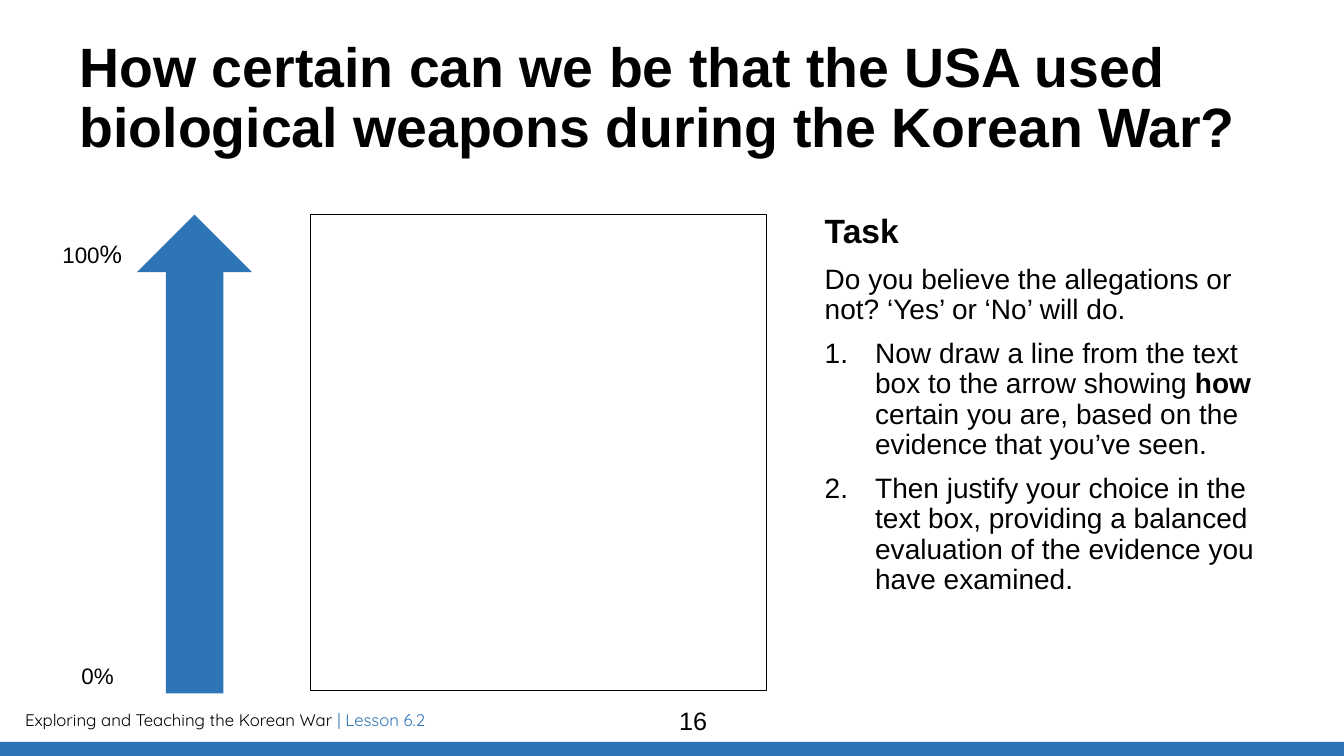
import pptx
import pptx.util
import pptx.dml.color
import pptx.enum.shapes
import pptx.enum.text
import pptx.oxml

Inches = pptx.util.Inches
Pt = pptx.util.Pt

COLOURS = {"text": "000000", "accent": "2E75B6", "paper": "FFFFFF"}
SLIDE_WIDTH, SLIDE_HEIGHT = 13.33, 7.5
CONTENT_TOP = 2.13

TITLE = "How certain can we be that the USA used biological weapons during the Korean War?"
FOOTER = [("Exploring and Teaching the Korean War ", "text"), ("| Lesson 6.2", "accent")]
PAGE_NUMBER = "16"
TASK_HEADING = "Task"
TASK_QUESTION = "Do you believe the allegations or not? ‘Yes’ or ‘No’ will do."
TASK_STEPS = [
    [("Now draw a line from the text box to the arrow showing ", False), ("how", True),
     (" certain you are, based on the evidence that you’ve seen.", False)],
    [("Then justify your choice in the text box, providing a balanced evaluation "
      "of the evidence you have examined.", False)],
]


def colour(name):
    return pptx.dml.color.RGBColor.from_string(COLOURS[name])


def add_box(slide, left, top, width, height, margin=None):
    box = slide.shapes.add_textbox(Inches(left), Inches(top), Inches(width), Inches(height))
    frame = box.text_frame
    frame.word_wrap = True
    if margin is not None:
        frame.margin_left = frame.margin_right = Inches(margin)
        frame.margin_top = frame.margin_bottom = Inches(margin)
    return frame


def style(paragraph, size, bold=None, font="Arial"):
    paragraph.font.name = font
    paragraph.font.size = Pt(size)
    paragraph.font.bold = bold
    paragraph.font.color.rgb = colour("text")


def add_runs(paragraph, parts):
    runs = []
    for text, *_ in parts:
        run = paragraph.add_run()
        run.text = text
        runs.append(run)
    return runs


def number(paragraph):
    properties = paragraph._p.get_or_add_pPr()
    properties.set("marL", str(Inches(0.5)))
    properties.set("indent", str(-Inches(0.5)))
    properties.append(pptx.oxml.parse_xml(
        '<a:buFont xmlns:a="http://schemas.openxmlformats.org/drawingml/2006/main" typeface="+mj-lt"/>'))
    properties.append(pptx.oxml.parse_xml(
        '<a:buAutoNum xmlns:a="http://schemas.openxmlformats.org/drawingml/2006/main" type="arabicPeriod"/>'))


def add_filled_shape(slide, kind, left, top, width, height, fill, line=None):
    shape = slide.shapes.add_shape(kind, Inches(left), Inches(top), Inches(width), Inches(height))
    shape.shadow.inherit = False
    shape.fill.solid()
    shape.fill.fore_color.rgb = colour(fill)
    if line:
        shape.line.color.rgb = colour(line)
        shape.line.width = Pt(1)
    else:
        shape.line.fill.background()


def add_footer(slide):
    paragraph = add_box(slide, 0.15, 6.99, 7.82, 0.3).paragraphs[0]
    for run, (_, name) in zip(add_runs(paragraph, FOOTER), FOOTER):
        run.font.color.rgb = colour(name)
    style(paragraph, 12, font="Quicksand")
    kind = pptx.enum.shapes.MSO_SHAPE.RECTANGLE
    add_filled_shape(slide, kind, 0, 7.36, SLIDE_WIDTH, 0.15, "accent")


def add_task(slide):
    frame = add_box(slide, 8.18, CONTENT_TOP, 4.31, 4.76, margin=0)
    heading = frame.paragraphs[0]
    heading.text = TASK_HEADING
    style(heading, 24, True)
    question = frame.add_paragraph()
    question.text = TASK_QUESTION
    style(question, 20)
    for step in TASK_STEPS:
        paragraph = frame.add_paragraph()
        number(paragraph)
        for run, (_, bold) in zip(add_runs(paragraph, step), step):
            run.font.bold = bold
        style(paragraph, 20)
    for paragraph in frame.paragraphs:
        paragraph.line_spacing = 0.9
    for paragraph in frame.paragraphs[1:]:
        paragraph.space_before = Pt(10)


def add_scale(slide):
    kinds = pptx.enum.shapes.MSO_SHAPE
    add_filled_shape(slide, kinds.UP_ARROW, 1.36, CONTENT_TOP, 1.14, 4.75, "accent")
    bottom_label = add_box(slide, 0.71, 6.52, 0.59, 0.37).paragraphs[0]
    bottom_label.text = "0%"
    style(bottom_label, 16)
    top_label = add_box(slide, 0.52, 2.32, 0.98, 0.4).paragraphs[0]
    percent = add_runs(top_label, [("100",), ("%",)])[1]
    percent.font.size = Pt(18)
    style(top_label, 16)
    add_filled_shape(slide, kinds.RECTANGLE, 3.08, CONTENT_TOP, 4.52, 4.72, "paper", "text")


def main():
    """Build the Korean War certainty task slide."""
    presentation = pptx.Presentation()
    presentation.slide_width = Inches(SLIDE_WIDTH)
    presentation.slide_height = Inches(SLIDE_HEIGHT)
    slide = presentation.slides.add_slide(presentation.slide_layouts[6])
    add_footer(slide)
    title = add_box(slide, 0.79, 0.39, 11.84, 1.45, margin=0).paragraphs[0]
    title.text = TITLE
    title.line_spacing = 0.9
    style(title, 39.6, True)
    add_task(slide)
    add_scale(slide)
    page = add_box(slide, 4.32, 6.95, 5.11, 0.4).paragraphs[0]
    page.text = PAGE_NUMBER
    page.alignment = pptx.enum.text.PP_ALIGN.CENTER
    style(page, 18)
    presentation.save("out.pptx")


if __name__ == "__main__":
    main()
